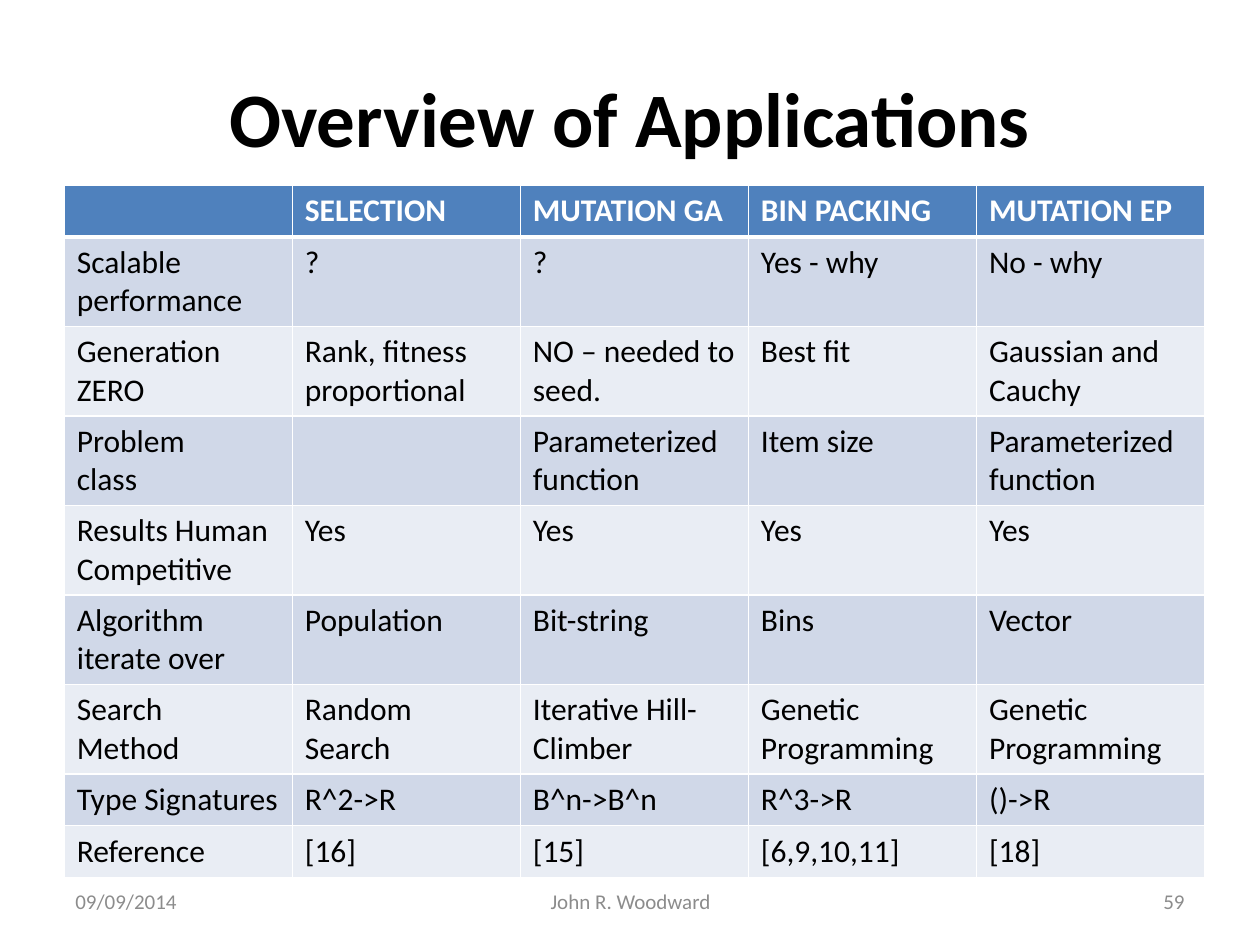
import pptx
import pptx.util
import pptx.dml.color
import pptx.enum.text
import pptx.oxml
import pptx.oxml.ns
from pptx.util import Inches

FONT = "Calibri"
COLORS = {
    "header": "4F81BD",
    "odd_row": "D0D8E8",
    "even_row": "E9EDF4",
    "white": "FFFFFF",
    "black": "000000",
    "footer": "8C8C8C",
}
ALIGN = pptx.enum.text.PP_ALIGN
MIDDLE = pptx.enum.text.MSO_ANCHOR.MIDDLE


def add_run(paragraph, text, size, color, bold=False):
    run = paragraph.add_run()
    run.text = text
    run.font.name = FONT
    run.font.size = pptx.util.Pt(size)
    run.font.bold = bold
    run.font.color.rgb = pptx.dml.color.RGBColor.from_string(COLORS[color])


def set_borders(cell, widths):
    """Draw white cell borders; widths maps each side to points."""
    properties = cell._tc.get_or_add_tcPr()
    for index, side in enumerate("LRTB"):
        line = pptx.oxml.parse_xml(
            f'<a:ln{side} {pptx.oxml.ns.nsdecls("a")} w="{pptx.util.Pt(widths[side])}">'
            f'<a:solidFill><a:srgbClr val="{COLORS["white"]}"/></a:solidFill></a:ln{side}>'
        )
        properties.insert(index, line)


presentation = pptx.Presentation()
presentation.slide_width = Inches(10)
presentation.slide_height = Inches(7.5)
slide = presentation.slides.add_slide(presentation.slide_layouts[5])

# Title
title = slide.shapes.title
title.left, title.top = Inches(0.5), Inches(0.3)
title.width, title.height = Inches(9), Inches(1.25)
title.text_frame.vertical_anchor = MIDDLE
paragraph = title.text_frame.paragraphs[0]
paragraph.alignment = ALIGN.CENTER
add_run(paragraph, "Overview of Applications", 44, "black", bold=True)

# Table: a line feed starts a new paragraph in the cell
rows = [
    ["", "SELECTION", "MUTATION GA", "BIN PACKING", "MUTATION EP"],
    ["Scalable performance", "?", "?", "Yes - why", "No - why"],
    ["Generation ZERO", "Rank, fitness proportional", "NO – needed to seed.",
     "Best fit", "Gaussian and Cauchy"],
    ["Problem\nclass", "", "Parameterized\nfunction", "Item size",
     "Parameterized\nfunction"],
    ["Results Human Competitive", "Yes", "Yes", "Yes", "Yes"],
    ["Algorithm iterate over", "Population", "Bit-string", "Bins", "Vector"],
    ["Search\nMethod", "Random\nSearch", "Iterative Hill-Climber",
     "Genetic\nProgramming", "Genetic Programming"],
    ["Type Signatures", "R^2->R", "B^n->B^n", "R^3->R", "()->R"],
    ["Reference", "[16]", "[15]", "[6,9,10,11]", "[18]"],
]
single_line_rows = {0, 7, 8}
table = slide.shapes.add_table(
    len(rows), len(rows[0]), Inches(0.51), Inches(1.47), Inches(9.06), Inches(5.43)
).table
for column in table.columns:
    column.width = Inches(1.81)

for row_index, texts in enumerate(rows):
    is_header = row_index == 0
    table.rows[row_index].height = Inches(0.41 if row_index in single_line_rows else 0.7)
    fill = "header" if is_header else "odd_row" if row_index % 2 else "even_row"
    widths = {"L": 1, "R": 1, "T": 3 if row_index == 1 else 1, "B": 3 if is_header else 1}
    for column_index, text in enumerate(texts):
        cell = table.cell(row_index, column_index)
        cell.fill.solid()
        cell.fill.fore_color.rgb = pptx.dml.color.RGBColor.from_string(COLORS[fill])
        set_borders(cell, widths)
        if not text:
            continue
        for line_index, line in enumerate(text.split("\n")):
            frame = cell.text_frame
            paragraph = frame.add_paragraph() if line_index else frame.paragraphs[0]
            add_run(paragraph, line, 18, "white" if is_header else "black", bold=is_header)

# Footer: date, author, slide number
footers = [
    (0.5, 2.33, "09/09/2014", ALIGN.LEFT),
    (3.42, 3.17, "John R. Woodward", ALIGN.CENTER),
    (7.17, 2.33, "59", ALIGN.RIGHT),
]
for left, width, text, alignment in footers:
    footer = slide.shapes.add_textbox(Inches(left), Inches(6.95), Inches(width), Inches(0.4))
    footer.text_frame.word_wrap = True
    footer.text_frame.vertical_anchor = MIDDLE
    paragraph = footer.text_frame.paragraphs[0]
    paragraph.alignment = alignment
    add_run(paragraph, text, 12, "footer")

presentation.save("out.pptx")
